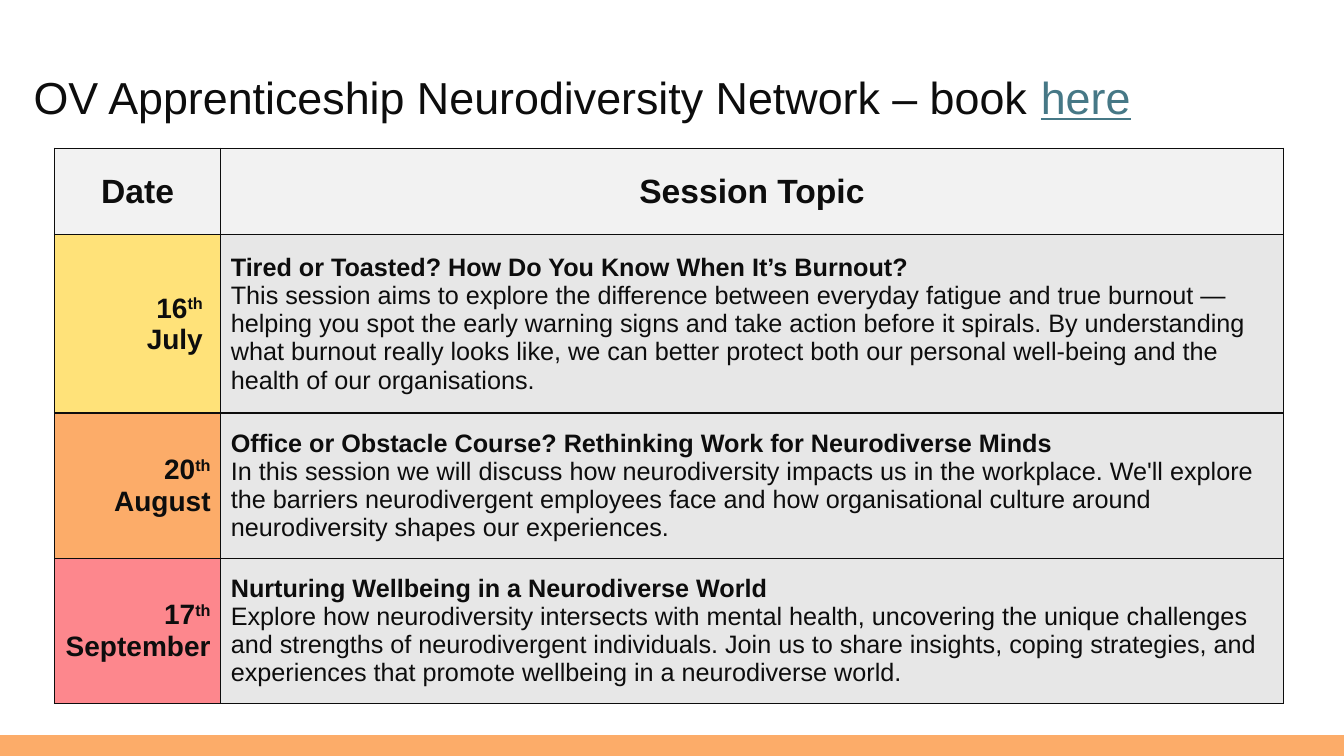
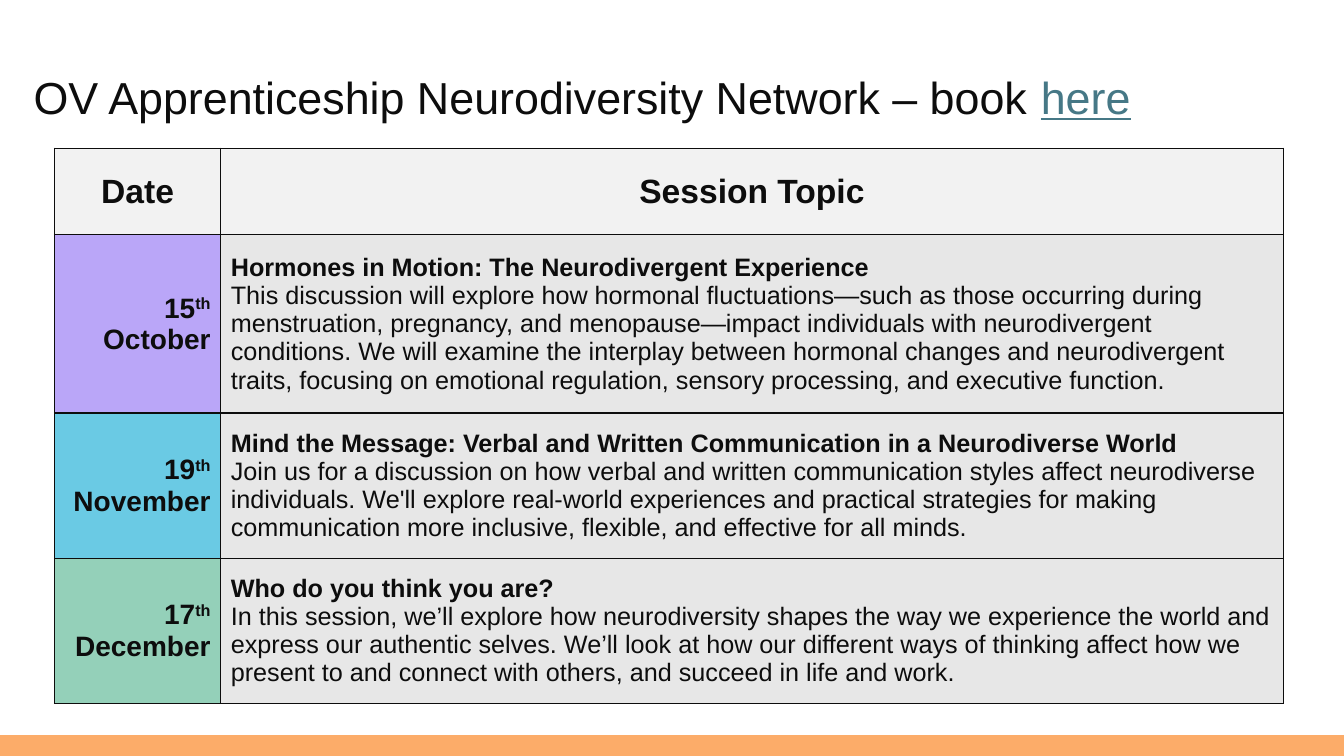
"""Build two schedule slides for a neurodiversity network."""
from pptx import Presentation
from pptx.dml.color import RGBColor
from pptx.enum import shapes, text
from pptx.oxml import parse_xml
from pptx.oxml.ns import nsdecls
from pptx.util import Pt

INK, LINK, ORANGE = "0D0D0D", "467886", "FCAC69"
HEADER_FILL, TOPIC_FILL = "F2F2F2", "E7E7E7"
FONT = "Arial"
WIDTH, HEIGHT, BAND = 960, 540, 15
TABLE_LEFT, TABLE_TOP = 38.9, 105.8
COLUMNS = (118.8, 758.9)
ROWS = (61.9, 127.4, 103.7, 103.7)
INSET, WIDE_INSET = 7.2, 12.8

TITLE = "OV Apprenticeship Neurodiversity Network – book "
TITLE_LINK = "here"
HEADINGS = ("Date", "Session Topic")
SCHEDULES = [
    [
        ("16", "July", "FFE279", WIDE_INSET,
         "Tired or Toasted? How Do You Know When It’s Burnout?",
         "This session aims to explore the difference between everyday fatigue and true burnout — "
         "helping you spot the early warning signs and take action before it spirals. By "
         "understanding what burnout really looks like, we can better protect both our personal "
         "well-being and the health of our organisations."),
        ("20", "August", ORANGE, INSET,
         "Office or Obstacle Course? Rethinking Work for Neurodiverse Minds",
         "In this session we will discuss how neurodiversity impacts us in the workplace. We'll "
         "explore the barriers neurodivergent employees face and how organisational culture "
         "around neurodiversity shapes our experiences."),
        ("17", "September", "FD878D", INSET,
         "Nurturing Wellbeing in a Neurodiverse World",
         "Explore how neurodiversity intersects with mental health, uncovering the unique "
         "challenges and strengths of neurodivergent individuals. Join us to share insights, "
         "coping strategies, and experiences that promote wellbeing in a neurodiverse world."),
    ],
    [
        ("15", "October", "BAA6F8", INSET,
         "Hormones in Motion: The Neurodivergent Experience",
         "This discussion will explore how hormonal fluctuations—such as those occurring during "
         "menstruation, pregnancy, and menopause—impact individuals with neurodivergent "
         "conditions. We will examine the interplay between hormonal changes and neurodivergent "
         "traits, focusing on emotional regulation, sensory processing, and executive function."),
        ("19", "November", "6ACAE4", INSET,
         "Mind the Message: Verbal and Written Communication in a Neurodiverse World",
         "Join us for a discussion on how verbal and written communication styles affect "
         "neurodiverse individuals. We'll explore real-world experiences and practical "
         "strategies for making communication more inclusive, flexible, and effective for all "
         "minds."),
        ("17", "December", "94D0B9", INSET,
         "Who do you think you are?",
         "In this session, we’ll explore how neurodiversity shapes the way we experience the "
         "world and express our authentic selves. We’ll look at how our different ways of "
         "thinking affect how we present to and connect with others, and succeed in life and "
         "work."),
    ],
]


def paint(fill, color):
    fill.solid()
    fill.fore_color.rgb = RGBColor.from_string(color)


def add_run(paragraph, words, size, bold=False, color=INK):
    run = paragraph.add_run()
    run.text = words
    run.font.name, run.font.size, run.font.bold = FONT, Pt(size), bold
    run.font.color.rgb = RGBColor.from_string(color)
    return run


def fill_cell(cell, lines, size, align, color):
    """Write lines, each a list of (words, bold, baseline) runs, into a bordered cell."""
    paint(cell.fill, color)
    cell.vertical_anchor = text.MSO_ANCHOR.MIDDLE
    properties = cell._tc.get_or_add_tcPr()
    for position, side in enumerate("LRTB"):
        properties.insert(position, parse_xml(
            f'<a:ln{side} {nsdecls("a")} w="{Pt(1)}"><a:solidFill>'
            f'<a:srgbClr val="{INK}"/></a:solidFill></a:ln{side}>'))
    frame = cell.text_frame
    for index, line in enumerate(lines):
        paragraph = frame.add_paragraph() if index else frame.paragraphs[0]
        paragraph.alignment = align
        for words, bold, baseline in line:
            run = add_run(paragraph, words, size, bold)
            if baseline:
                run.font._element.set("baseline", str(baseline * 1000))


def add_band(slide):
    band = slide.shapes.add_shape(shapes.MSO_SHAPE.RECTANGLE, 0, Pt(HEIGHT - BAND),
                                  Pt(WIDTH), Pt(BAND))
    band.shadow.inherit = False
    paint(band.fill, ORANGE)
    band.line.fill.background()


def add_title(slide):
    frame = slide.shapes.add_textbox(Pt(24), Pt(50.4), Pt(WIDTH - 24), Pt(57)).text_frame
    frame.word_wrap = True
    frame.margin_left = frame.margin_right = 0
    paragraph = frame.paragraphs[0]
    paragraph.line_spacing = 0.9
    add_run(paragraph, TITLE, 32)
    add_run(paragraph, TITLE_LINK, 32, color=LINK).font.underline = True


def add_schedule(slide, sessions):
    table = slide.shapes.add_table(len(ROWS), len(COLUMNS), Pt(TABLE_LEFT), Pt(TABLE_TOP),
                                   Pt(sum(COLUMNS)), Pt(sum(ROWS))).table
    for column, width in zip(table.columns, COLUMNS):
        column.width = Pt(width)
    for row, height in zip(table.rows, ROWS):
        row.height = Pt(height)
    for index, heading in enumerate(HEADINGS):
        fill_cell(table.cell(0, index), [[(heading, True, 0)]], 24,
                  text.PP_ALIGN.CENTER, HEADER_FILL)
    for row, (day, month, color, inset, topic, summary) in enumerate(sessions, 1):
        date = table.cell(row, 0)
        date.margin_right = Pt(inset)
        fill_cell(date, [[(day, True, 0), ("th", True, 30)], [(month, True, 0)]], 20,
                  text.PP_ALIGN.RIGHT, color)
        fill_cell(table.cell(row, 1), [[(topic, True, 0)], [(summary, False, 0)]], 18,
                  text.PP_ALIGN.LEFT, TOPIC_FILL)


def main():
    deck = Presentation()
    deck.slide_width, deck.slide_height = Pt(WIDTH), Pt(HEIGHT)
    for sessions in SCHEDULES:
        slide = deck.slides.add_slide(deck.slide_layouts[6])
        add_band(slide)
        add_schedule(slide, sessions)
        add_title(slide)
    deck.save("out.pptx")


if __name__ == "__main__":
    main()
